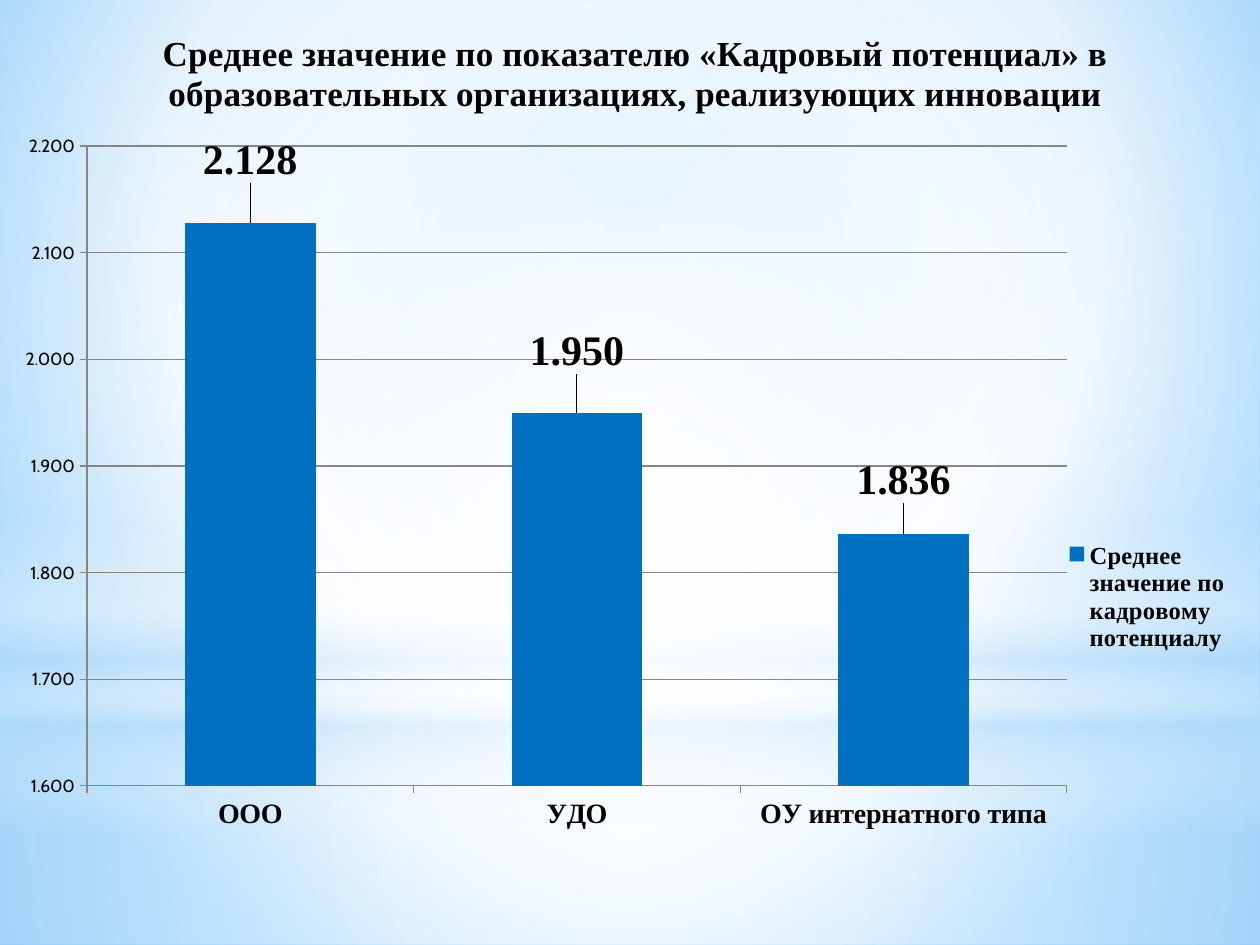
import pptx
import pptx.chart.data
import pptx.dml.color
import pptx.enum.chart
import pptx.enum.shapes
import pptx.oxml
import pptx.oxml.ns
import pptx.util

PX = 914400 / 126
RGB = pptx.dml.color.RGBColor
BLUE = RGB(0x00, 0x70, 0xC0)
SKY = RGB(0x9E, 0xD5, 0xFF)
DEEP = RGB(0x5B, 0xB9, 0xFF)
PALE = RGB(0xB4, 0xDC, 0xFA)
WHITE = RGB(0xFF, 0xFF, 0xFF)
BLACK = RGB(0x00, 0x00, 0x00)
GRAY = RGB(0x86, 0x86, 0x86)
SERIF = "Times New Roman"
SANS = "Cabin"
MID = (50, 50, 50, 50)
HEAD = ("Среднее значение по показателю «Кадровый потенциал» в "
        "образовательных организациях, реализующих инновации")
NAME = "Среднее значение по кадровому потенциалу"
DATA = {"ООО": 2.128, "УДО": 1.95, "ОУ интернатного типа": 1.836}
LIFTS = (-34, -33, -26)


def px(n):
    """Turn px into EMU."""
    return pptx.util.Emu(round(n * PX))


def blend(node, stops, focus=None):
    """Swap the solid fill in node for a gradient, round a focus or downward."""
    marks = "".join(
        f'<a:gs pos="{pos * 1000}"><a:srgbClr val="{tint}">'
        f'<a:alpha val="{alpha * 1000}"/></a:srgbClr></a:gs>'
        for pos, tint, alpha in stops)
    if focus:
        sides = " ".join(f'{k}="{v * 1000}"' for k, v in zip("ltrb", focus))
        way = f'<a:path path="circle"><a:fillToRect {sides}/></a:path>'
    else:
        way = '<a:lin ang="5400000" scaled="0"/>'
    grad = pptx.oxml.parse_xml(
        f'<a:gradFill {pptx.oxml.ns.nsdecls("a")} rotWithShape="1">'
        f'<a:gsLst>{marks}</a:gsLst>{way}</a:gradFill>')
    old = node.find(".//" + pptx.oxml.ns.qn("a:solidFill"))
    old.getparent().replace(old, grad)


def glow(slide, kind, box, stops, focus=None):
    """Add one borderless shape with a gradient fill."""
    shape = slide.shapes.add_shape(kind, *map(px, box))
    shape.shadow.inherit = False
    shape.line.fill.background()
    shape.fill.solid()
    shape.fill.fore_color.rgb = WHITE
    blend(shape._element, stops, focus)


def backdrop(slide, box):
    """Paint the sky and its layers of light inside the box."""
    x, y, w, h = box
    kinds = pptx.enum.shapes.MSO_SHAPE
    rise = h - 242
    slide.background.fill.solid()
    slide.background.fill.fore_color.rgb = SKY
    blend(slide._element, [(0, SKY, 100), (60, WHITE, 100), (100, DEEP, 100)],
          (20, 10, 20, 60))
    glow(slide, kinds.RECTANGLE, (x, y + rise, w, 242),
         [(0, WHITE, 91), (37, WHITE, 76), (100, PALE, 79)], MID)
    glow(slide, kinds.RECTANGLE, (x, y, w, rise),
         [(0, WHITE, 89), (48, WHITE, 62), (100, PALE, 79)], MID)
    glow(slide, kinds.RECTANGLE, (x, y + 519, w, 315),
         [(0, WHITE, 0), (29, WHITE, 30), (45, PALE, 40),
          (55, WHITE, 26), (65, PALE, 60), (100, WHITE, 0)])
    glow(slide, kinds.OVAL, (x, y + 220, w, rise),
         [(0, WHITE, 100), (56, WHITE, 0)], MID)


def layout(node, index, body):
    """Give a chart part a manual layout."""
    old = node.find(pptx.oxml.ns.qn("c:layout"))
    if old is not None:
        node.remove(old)
    node.insert(index, pptx.oxml.parse_xml(
        f'<c:layout {pptx.oxml.ns.nsdecls("c")}>'
        f'<c:manualLayout>{body}</c:manualLayout></c:layout>'))


def place(node, index, box, size, inner=""):
    """Put a chart part at a box in px within the chart's size."""
    parts = [f'<c:{k} val="{n / size[i % 2]:.4f}"/>'
             for i, (k, n) in enumerate(zip("xywh", box))]
    layout(node, index, inner + '<c:xMode val="edge"/><c:yMode val="edge"/>'
           + "".join(parts))


def style(font, size, face=SERIF, bold=True):
    """Set a font's face, size and weight in black."""
    font.name = face
    font.size = pptx.util.Pt(size)
    font.bold = bold
    font.color.rgb = BLACK


def axes(chart):
    """Style both axes and the grid."""
    marks = pptx.enum.chart.XL_TICK_MARK
    rows, cols = chart.value_axis, chart.category_axis
    rows.minimum_scale, rows.maximum_scale, rows.major_unit = 1.6, 2.2, 0.1
    rows.tick_labels.number_format = "0.000"
    rows.tick_labels.number_format_is_linked = False
    rows.has_major_gridlines = True
    style(rows.tick_labels.font, 10, SANS, False)
    style(cols.tick_labels.font, 16)
    for part in (rows, cols, rows.major_gridlines):
        part.format.line.color.rgb = GRAY
        part.format.line.width = pptx.util.Pt(0.75)
    for axis in (rows, cols):
        axis.major_tick_mark = marks.OUTSIDE
        axis.minor_tick_mark = marks.NONE


def bars(plot, tall):
    """Colour the bars and lift their value labels."""
    spot = pptx.enum.chart.XL_LABEL_POSITION.OUTSIDE_END
    plot.gap_width = 150
    plot.vary_by_categories = False
    row = plot.series[0]
    row.format.fill.solid()
    row.format.fill.fore_color.rgb = BLUE
    tags = row.data_labels
    tags.show_value = True
    tags.number_format = "0.000"
    tags.number_format_is_linked = False
    tags.position = spot
    style(tags.font, 24)
    for i, lift in enumerate(LIFTS):
        tag = row.points[i].data_label
        style(tag.font, 24)
        tag.position = spot
        layout(tags._element.dLbl_lst[i], 1,
               f'<c:x val="0"/><c:y val="{lift / tall:.4f}"/>')


def graph(slide, box):
    """Add the column chart in the box."""
    size = box[2:]
    data = pptx.chart.data.CategoryChartData(number_format="0.000")
    data.categories = list(DATA)
    data.add_series(NAME, DATA.values())
    chart = slide.shapes.add_chart(
        pptx.enum.chart.XL_CHART_TYPE.COLUMN_CLUSTERED,
        *map(px, box), data).chart
    style(chart.font, 10, SANS, False)
    chart.has_title = True
    run = chart.chart_title.text_frame.paragraphs[0].add_run()
    run.text = HEAD
    style(run.font, 20)
    chart.has_legend = True
    legend = chart.legend
    legend.position = pptx.enum.chart.XL_LEGEND_POSITION.RIGHT
    legend.include_in_layout = False
    style(legend.font, 14)
    axes(chart)
    bars(chart.plots[0], size[1])
    place(legend._element, 1, (1044, 538, 180, 120), size)
    place(chart._chartSpace.chart.plotArea, 0, (74, 147, 980, 640), size,
          '<c:layoutTarget val="inner"/>')


def main():
    """Build and save the slide."""
    deck = pptx.Presentation()
    deck.slide_width, deck.slide_height = px(1260), px(945)
    slide = deck.slides.add_slide(deck.slide_layouts[6])
    backdrop(slide, (0, 0, 1260, 945))
    graph(slide, (13, -1, 1245, 945))
    deck.save("out.pptx")


if __name__ == "__main__":
    main()
